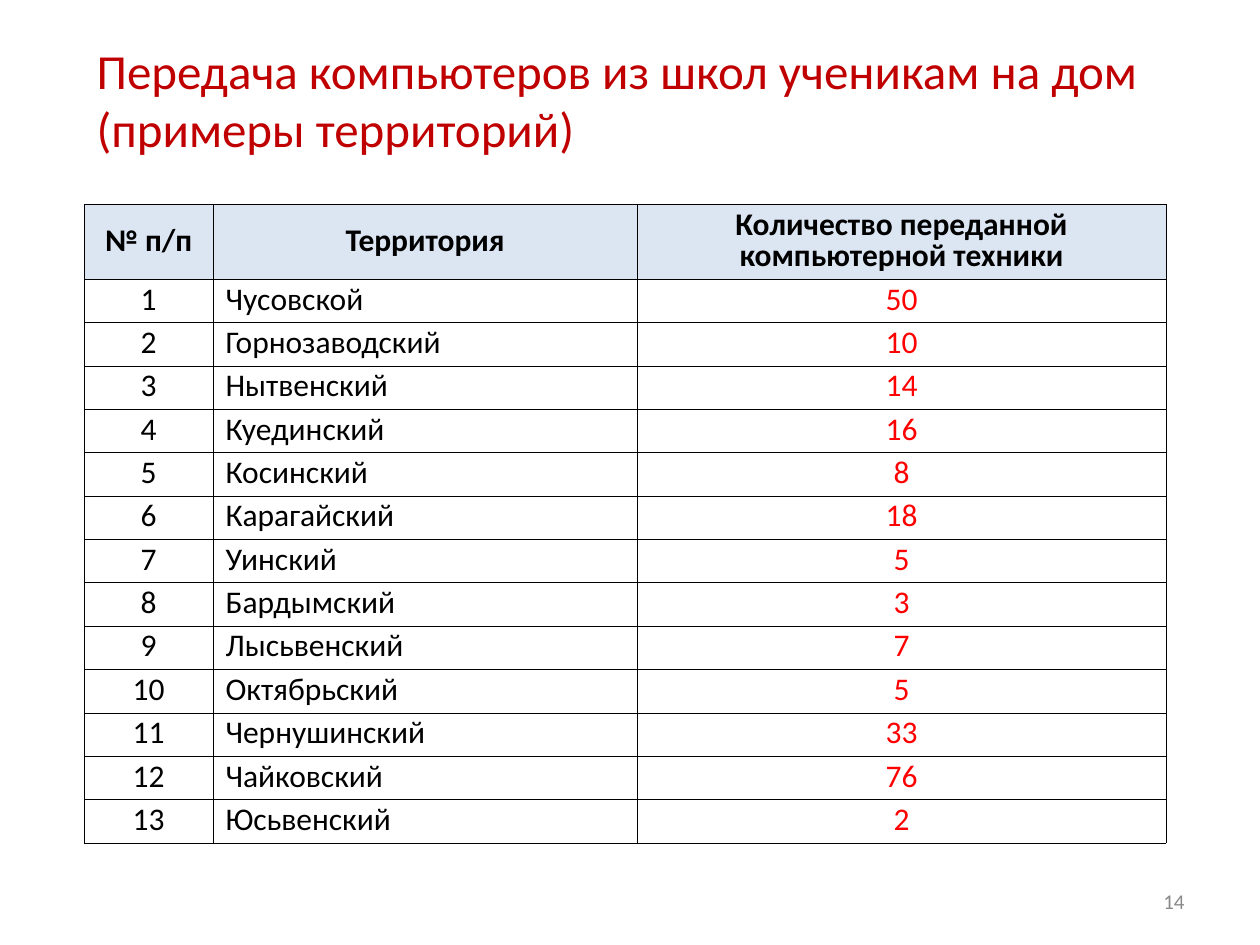
"""Build a slide with a table of school computers handed over to pupils."""
import dataclasses

import lxml.etree
import pptx
import pptx.dml.color
import pptx.enum.text
import pptx.oxml.ns
import pptx.util

Pt = pptx.util.Pt
RGB = pptx.dml.color.RGBColor.from_string
ALIGN = pptx.enum.text.PP_ALIGN
ANCHOR = pptx.enum.text.MSO_ANCHOR
qn = pptx.oxml.ns.qn


@dataclasses.dataclass(frozen=True)
class Theme:
    font: str = "Calibri"
    title: str = "C00000"
    text: str = "000000"
    count: str = "FF0000"
    number: str = "898989"
    header_fill: str = "DCE6F2"
    border: str = "000000"
    border_width: float = 0.25
    title_size: int = 28
    table_size: int = 18
    number_size: int = 12


THEME = Theme()
HEADERS = ("№ п/п", "Территория", "Количество переданной компьютерной техники")
TERRITORIES = (
    ("Чусовской", 50),
    ("Горнозаводский", 10),
    ("Нытвенский", 14),
    ("Куединский", 16),
    ("Косинский", 8),
    ("Карагайский", 18),
    ("Уинский", 5),
    ("Бардымский", 3),
    ("Лысьвенский", 7),
    ("Октябрьский", 5),
    ("Чернушинский", 33),
    ("Чайковский", 76),
    ("Юсьвенский", 2),
)
COLUMN_WIDTHS = (73.5, 242.5, 302)
COLUMN_ALIGNS = (ALIGN.CENTER, ALIGN.LEFT, ALIGN.CENTER)
COLUMN_COLORS = (THEME.text, THEME.text, THEME.count)
HEADER_HEIGHT, ROW_HEIGHT = 42.8, 24.8


def set_attrs(obj, values):
    for name, value in values.items():
        setattr(obj, name, value)


def write(tf, text, size, color, align=ALIGN.LEFT, bold=False, spacing=None):
    p = tf.paragraphs[0]
    set_attrs(p, {"alignment": align, "line_spacing": spacing})
    r = p.add_run()
    r.text = text
    set_attrs(r.font, {"name": THEME.font, "size": Pt(size), "bold": bold})
    r.font.color.rgb = RGB(color)


def place(sp, left, top, width, height):
    box = zip(("left", "top", "width", "height"), (left, top, width, height))
    set_attrs(sp, {name: Pt(value) for name, value in box})


def add_title(s, text):
    sp = s.shapes.title
    place(sp, 48, 31.5, 648, 50)
    set_attrs(sp.text_frame, {
        "word_wrap": True,
        "auto_size": pptx.enum.text.MSO_AUTO_SIZE.NONE,
        "vertical_anchor": ANCHOR.MIDDLE,
    })
    write(sp.text_frame, text, THEME.title_size, THEME.title)


def add_page_number(s, text):
    sp = s.shapes.add_textbox(Pt(516), Pt(500.5), Pt(168), Pt(28.75))
    set_attrs(sp.text_frame, {"word_wrap": True, "vertical_anchor": ANCHOR.MIDDLE})
    write(sp.text_frame, text, THEME.number_size, THEME.number, ALIGN.RIGHT)


def add_borders(cell):
    tc_pr = cell._tc.get_or_add_tcPr()
    for side in ("a:lnL", "a:lnR", "a:lnT", "a:lnB"):
        ln = lxml.etree.SubElement(tc_pr, qn(side), w=str(Pt(THEME.border_width)))
        fill = lxml.etree.SubElement(ln, qn("a:solidFill"))
        lxml.etree.SubElement(fill, qn("a:srgbClr"), val=THEME.border)


def format_cell(cell, text, color, align, header):
    add_borders(cell)
    if header:
        cell.fill.solid()
        cell.fill.fore_color.rgb = RGB(THEME.header_fill)
    else:
        cell.fill.background()
    cell.vertical_anchor = ANCHOR.MIDDLE if header else ANCHOR.TOP
    write(cell.text_frame, text, THEME.table_size, color, align, header, 0.8)


def add_territory_table(s):
    rows = [HEADERS]
    rows += [(str(i), name, str(n)) for i, (name, n) in enumerate(TERRITORIES, 1)]
    heights = [HEADER_HEIGHT] + [ROW_HEIGHT] * len(TERRITORIES)
    table = s.shapes.add_table(
        len(rows), len(HEADERS), Pt(48.25), Pt(116.75),
        Pt(sum(COLUMN_WIDTHS)), Pt(sum(heights)),
    ).table
    set_attrs(table, {"first_row": False, "horz_banding": False})
    for column, width in zip(table.columns, COLUMN_WIDTHS):
        column.width = Pt(width)
    for i, (values, height) in enumerate(zip(rows, heights)):
        table.rows[i].height = Pt(height)
        header = i == 0
        for j, text in enumerate(values):
            color = THEME.text if header else COLUMN_COLORS[j]
            align = ALIGN.CENTER if header else COLUMN_ALIGNS[j]
            format_cell(table.cell(i, j), text, color, align, header)


def main():
    prs = pptx.Presentation()
    set_attrs(prs, {"slide_width": Pt(720), "slide_height": Pt(540)})
    s = prs.slides.add_slide(prs.slide_layouts.get_by_name("Title Only"))
    add_title(s, "Передача компьютеров из школ ученикам на дом (примеры территорий)")
    add_page_number(s, "14")
    add_territory_table(s)
    prs.save("out.pptx")


if __name__ == "__main__":
    main()
